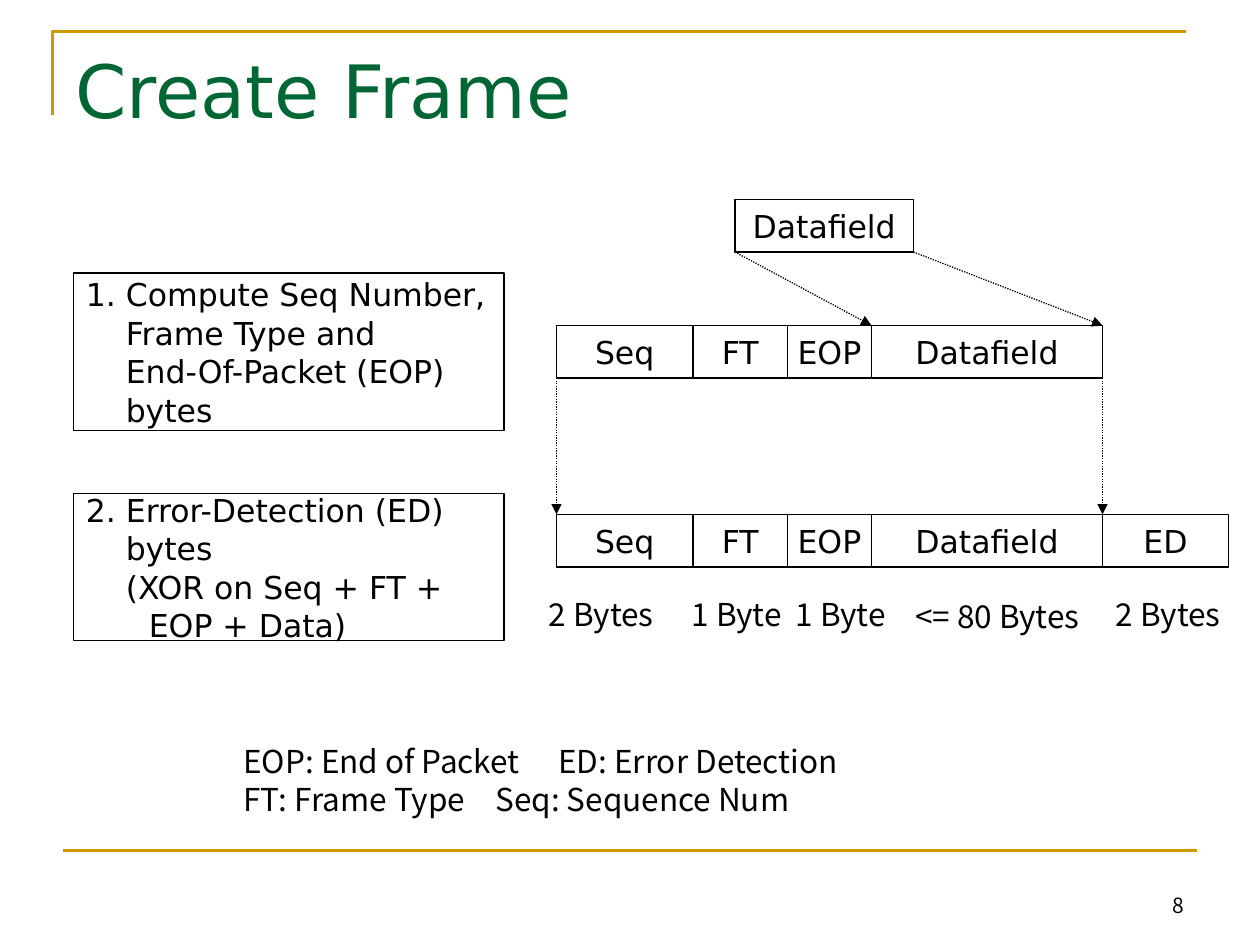
from itertools import pairwise

from lxml import etree
from pptx import Presentation
from pptx import util as u
from pptx.dml.color import RGBColor
from pptx.enum import dml, shapes, text
from pptx.oxml.ns import qn

BLACK = RGBColor(0x00, 0x00, 0x00)
GREEN = RGBColor(0x00, 0x66, 0x33)
GOLD = RGBColor(0xCC, 0x99, 0x00)
SANS, CJK = "DejaVu Sans", "Noto Sans CJK KR"
LEADING = 1.22


def px(n):
    """Convert px (120 to the inch) to EMU."""
    return u.Emu(n * 7620)


class Deck:
    """Holds the style and the current slide."""

    body = {"name": SANS, "size": u.Pt(18)}
    label = {"name": CJK, "size": u.Pt(18)}
    title = {"name": SANS, "size": u.Pt(42)}
    number = {"name": CJK, "size": u.Pt(12)}

    def __init__(self, prs):
        self.s = prs.slides.add_slide(prs.slide_layouts[6])

    def fill_text(self, sp, lines, font, color=BLACK, align=text.PP_ALIGN.LEFT,
                  anchor=text.MSO_ANCHOR.TOP, wrap=True, tab=None):
        """Each line is a string, or a (string, left margin, indent) tuple."""
        tf = sp.text_frame
        frame = {"word_wrap": wrap, "vertical_anchor": anchor}
        for name, value in frame.items():
            setattr(tf, name, value)
        for i, line in enumerate(lines):
            words, margin, indent = line if isinstance(line, tuple) else (line, 0, 0)
            p = tf.paragraphs[0] if i == 0 else tf.add_paragraph()
            p.alignment = align
            p.line_spacing = u.Pt(round(font["size"].pt * LEADING))
            pPr = p._p.get_or_add_pPr()
            pPr.set("marL", str(px(margin)))
            pPr.set("indent", str(px(indent)))
            if tab:
                tabs = etree.SubElement(pPr, qn("a:tabLst"))
                etree.SubElement(tabs, qn("a:tab"), pos=str(px(tab)), algn="l")
            r = p.add_run()
            r.text = words
            for name, value in font.items():
                setattr(r.font, name, value)
            r.font.color.rgb = color

    def text(self, x, y, w, h, lines, font, **fmt):
        sp = self.s.shapes.add_textbox(px(x), px(y), px(w), px(h))
        self.fill_text(sp, lines, font, **fmt)

    def box(self, x, y, w, h, lines, **fmt):
        sp = self.s.shapes.add_shape(
            shapes.MSO_SHAPE.RECTANGLE, px(x), px(y), px(w), px(h))
        self.outline(sp, BLACK, 0.75)
        self.fill_text(sp, lines, self.body, anchor=text.MSO_ANCHOR.MIDDLE, **fmt)

    def field(self, x, y, w, name):
        self.box(x, y, w, 50, [name], align=text.PP_ALIGN.CENTER, wrap=False)

    def outline(self, sp, color, width):
        sp.shadow.inherit = False
        sp.fill.background()
        sp.line.color.rgb = color
        sp.line.width = u.Pt(width)

    def corner(self, start, *points):
        builder = self.s.shapes.build_freeform(px(start[0]), px(start[1]))
        builder.add_line_segments([(px(x), px(y)) for x, y in points], close=False)
        self.outline(builder.convert_to_shape(), GOLD, 1.5)

    def line(self, x1, y1, x2, y2, color, width):
        c = self.s.shapes.add_connector(
            shapes.MSO_CONNECTOR.STRAIGHT, px(x1), px(y1), px(x2), px(y2))
        c.line.color.rgb = color
        c.line.width = u.Pt(width)
        etree.SubElement(c._element.spPr, qn("a:effectLst"))
        return c

    def arrow(self, x1, y1, x2, y2):
        c = self.line(x1, y1, x2, y2, BLACK, 0.75)
        c.line.dash_style = dml.MSO_LINE.ROUND_DOT
        etree.SubElement(c.line._get_or_add_ln(), qn("a:tailEnd"), type="triangle")


def main():
    prs = Presentation()
    prs.slide_width, prs.slide_height = px(1200), px(900)
    deck = Deck(prs)

    # Frame lines, page number and title
    deck.corner((50, 110), (50, 30), (1130, 30))
    deck.line(60, 810, 1140, 810, GOLD, 1.5)
    deck.text(860, 820, 280, 60, ["8"], deck.number,
              align=text.PP_ALIGN.RIGHT, anchor=text.MSO_ANCHOR.BOTTOM)
    deck.text(60, 36, 1080, 150, ["Create Frame"], deck.title, color=GREEN)

    # Steps, with the text hanging after the number
    hang = 38
    deck.box(70, 260, 410, 150, [
        ("1. Compute Seq Number,", hang, -hang),
        ("Frame Type and", hang, 0),
        ("End-Of-Packet (EOP)", hang, 0),
        ("bytes", hang, 0)])
    deck.box(70, 470, 410, 140, [
        ("2. Error-Detection (ED)", hang, -hang),
        ("bytes", hang, 0),
        ("(XOR on Seq + FT + EOP + Data)", 60, hang - 60)])

    # The data field, then the frame before and after error detection
    names = ["Seq", "FT", "EOP", "Datafield", "ED"]
    edges = [530, 660, 750, 830, 1050, 1170]
    deck.field(700, 190, 170, "Datafield")
    for y, count in ((310, 4), (490, 5)):
        for name, (left, right) in zip(names[:count], pairwise(edges)):
            deck.field(left, y, right - left, name)

    # Arrows from each stage to the next
    for x1, y1, x2, y2 in ((700, 240, 830, 310), (870, 240, 1050, 310),
                           (530, 360, 530, 490), (1050, 360, 1050, 490)):
        deck.arrow(x1, y1, x2, y2)

    # Field sizes
    for x, y, w, size in ((511, 560, 128, "2 Bytes"), (647, 560, 113, "1 Byte"),
                          (746, 560, 113, "1 Byte"), (860, 562, 196, "<= 80 Bytes"),
                          (1051, 560, 128, "2 Bytes")):
        deck.text(x, y, w, 48, [size], deck.label, wrap=False)

    # Abbreviations in two columns
    deck.text(220, 700, 792, 84, ["EOP: End of Packet\tED: Error Detection",
                                  "FT: Frame Type\tSeq: Sequence Num"],
              deck.label, tab=480)

    prs.save("out.pptx")


if __name__ == "__main__":
    main()
